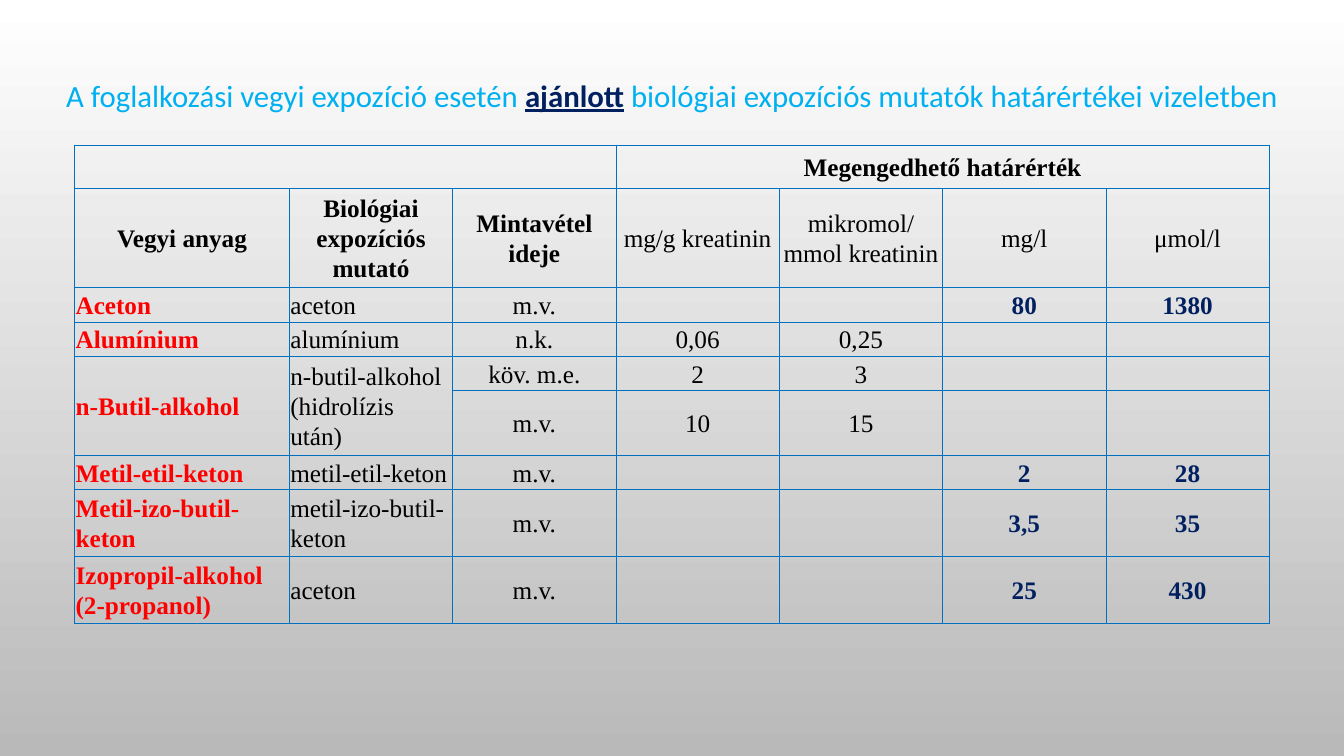
from dataclasses import dataclass

from lxml import etree
from pptx import Presentation
from pptx.dml.color import RGBColor
from pptx.enum.text import MSO_ANCHOR, MSO_AUTO_SIZE, PP_ALIGN
from pptx.oxml.ns import qn
from pptx.util import Inches, Pt

LEFT, CENTER = PP_ALIGN.LEFT, PP_ALIGN.CENTER
MIDDLE = MSO_ANCHOR.MIDDLE
GROW = MSO_AUTO_SIZE.SHAPE_TO_FIT_TEXT


@dataclass(frozen=True)
class Theme:
    """Colours, fonts and sizes of the slide."""
    sky: str = "00B0F0"
    navy: str = "002060"
    red: str = "FF0000"
    black: str = "000000"
    line: str = "0070C0"
    back: tuple = ("FFFFFF", "B9B9B9")
    title_font: str = "Calibri"
    table_font: str = "Times New Roman"
    title_size: int = 22
    table_size: int = 18
    inner_line: float = 0.5
    outer_line: float = 1


T = Theme()
SLIDE_W, SLIDE_H = 13.33, 7.5
TITLE_BOX = (0.49, 0.6, 12.35, 0.58)
TABLE_BOX = (0.74, 1.44, 11.85, 4.75)
COLS = [2.13] + [1.62] * 6
ROWS = [0.43, 0.62] + [0.33] * 5 + [0.62] * 2
HEADER_ROWS = 2
MERGES = [((0, 0), (0, 2)), ((0, 3), (0, 6)), ((4, 0), (5, 0)), ((4, 1), (5, 1))]
TITLE = [
    ("A foglalkozási vegyi expozíció esetén ", {"color": T.sky}),
    ("ajánlott", {"color": T.navy, "bold": True, "underline": True}),
    (" biológiai expozíciós mutatók határértékei vizeletben", {"color": T.sky}),
]
LIMITS = [
    ["", "", "", "Megengedhető határérték", "", "", ""],
    ["Vegyi anyag", "Biológiai expozíciós mutató", "Mintavétel ideje",
     "mg/g kreatinin", "mikromol/ mmol kreatinin", "mg/l", "μmol/l"],
    ["Aceton", "aceton", "m.v.", "", "", "80", "1380"],
    ["Alumínium", "alumínium", "n.k.", "0,06", "0,25", "", ""],
    ["n-Butil-alkohol", "n-butil-alkohol (hidrolízis után)", "köv. m.e.",
     "2", "3", "", ""],
    ["", "", "m.v.", "10", "15", "", ""],
    ["Metil-etil-keton", "metil-etil-keton", "m.v.", "", "", "2", "28"],
    ["Metil-izo-butil-\nketon", "metil-izo-butil-\nketon", "m.v.",
     "", "", "3,5", "35"],
    ["Izopropil-alkohol (2-propanol)", "aceton", "m.v.", "", "", "25", "430"],
]


def set_format(target, values):
    """Set each attribute of the target from a dict."""
    for name, value in values.items():
        if name == "color":
            target.color.rgb = RGBColor.from_string(value)
        else:
            setattr(target, name, value)


def paint_background(s):
    """Fill the slide with a vertical gradient."""
    fill = s.background.fill
    fill.gradient()
    fill.gradient_angle = 270
    for stop, color, position in zip(fill.gradient_stops, T.back, (0, 1)):
        set_format(stop, {"color": color, "position": position})


def add_title(s):
    """Add the title line with its stressed word."""
    tf = s.shapes.add_textbox(*map(Inches, TITLE_BOX)).text_frame
    set_format(tf, {"word_wrap": True, "auto_size": GROW})
    p = tf.paragraphs[0]
    set_format(p, {"alignment": CENTER, "line_spacing": 1.3})
    for text, values in TITLE:
        r = p.add_run()
        r.text = text
        set_format(r.font, {"name": T.title_font, "size": Pt(T.title_size), **values})


def add_borders(cell, row, col):
    """Draw the four borders, heavier at the table's edge."""
    tc_pr = cell._tc.get_or_add_tcPr()
    edges = {"a:lnL": col == 0, "a:lnR": col == len(COLS) - 1,
             "a:lnT": row == 0, "a:lnB": row == len(ROWS) - 1}
    for i, (tag, outer) in enumerate(edges.items()):
        width = Pt(T.outer_line if outer else T.inner_line)
        ln = etree.Element(qn(tag), w=str(width))
        fill = etree.SubElement(ln, qn("a:solidFill"))
        etree.SubElement(fill, qn("a:srgbClr"), val=T.line)
        tc_pr.insert(i, ln)


def cell_font(row, col):
    """Return the colour and weight that a cell's place calls for."""
    if row < HEADER_ROWS:
        return {"color": T.black, "bold": row == 0 or col < 3}
    if col == 0:
        return {"color": T.red, "bold": True}
    if col > 4:
        return {"color": T.navy, "bold": True}
    return {"color": T.black, "bold": False}


def fill_cell(cell, row, col, text):
    """Write and format one cell."""
    cell.fill.background()
    margins = dict.fromkeys(
        ("margin_left", "margin_right", "margin_top", "margin_bottom"), Inches(0.01))
    set_format(cell, {"vertical_anchor": MIDDLE, **margins})
    add_borders(cell, row, col)
    p = cell.text_frame.paragraphs[0]
    left = row >= HEADER_ROWS and col < 2
    set_format(p, {"alignment": LEFT if left else CENTER,
                   "line_spacing": 1.07, "space_after": Pt(8)})
    font = {"name": T.table_font, "size": Pt(T.table_size), **cell_font(row, col)}
    if not text:
        etree.SubElement(p._p, qn("a:endParaRPr"), sz=str(T.table_size * 100))
        return
    for i, part in enumerate(text.split("\n")):
        if i:
            p.add_line_break()
        r = p.add_run()
        r.text = part
        set_format(r.font, font)


def add_limits_table(s):
    """Add the table of limit values."""
    frame = s.shapes.add_table(len(ROWS), len(COLS), *map(Inches, TABLE_BOX))
    table = frame.table
    set_format(table, {"first_row": False, "horz_banding": False})
    for column, width in zip(table.columns, COLS):
        column.width = Inches(width)
    for row, height in zip(table.rows, ROWS):
        row.height = Inches(height)
    frame.height = Inches(TABLE_BOX[3])
    for row, texts in enumerate(LIMITS):
        for col, text in enumerate(texts):
            fill_cell(table.cell(row, col), row, col, text)
    for first, last in MERGES:
        table.cell(*first).merge(table.cell(*last))


def main():
    """Build and save the slide."""
    prs = Presentation()
    set_format(prs, {"slide_width": Inches(SLIDE_W), "slide_height": Inches(SLIDE_H)})
    s = prs.slides.add_slide(prs.slide_layouts[6])
    paint_background(s)
    add_title(s)
    add_limits_table(s)
    prs.save("out.pptx")


if __name__ == "__main__":
    main()
